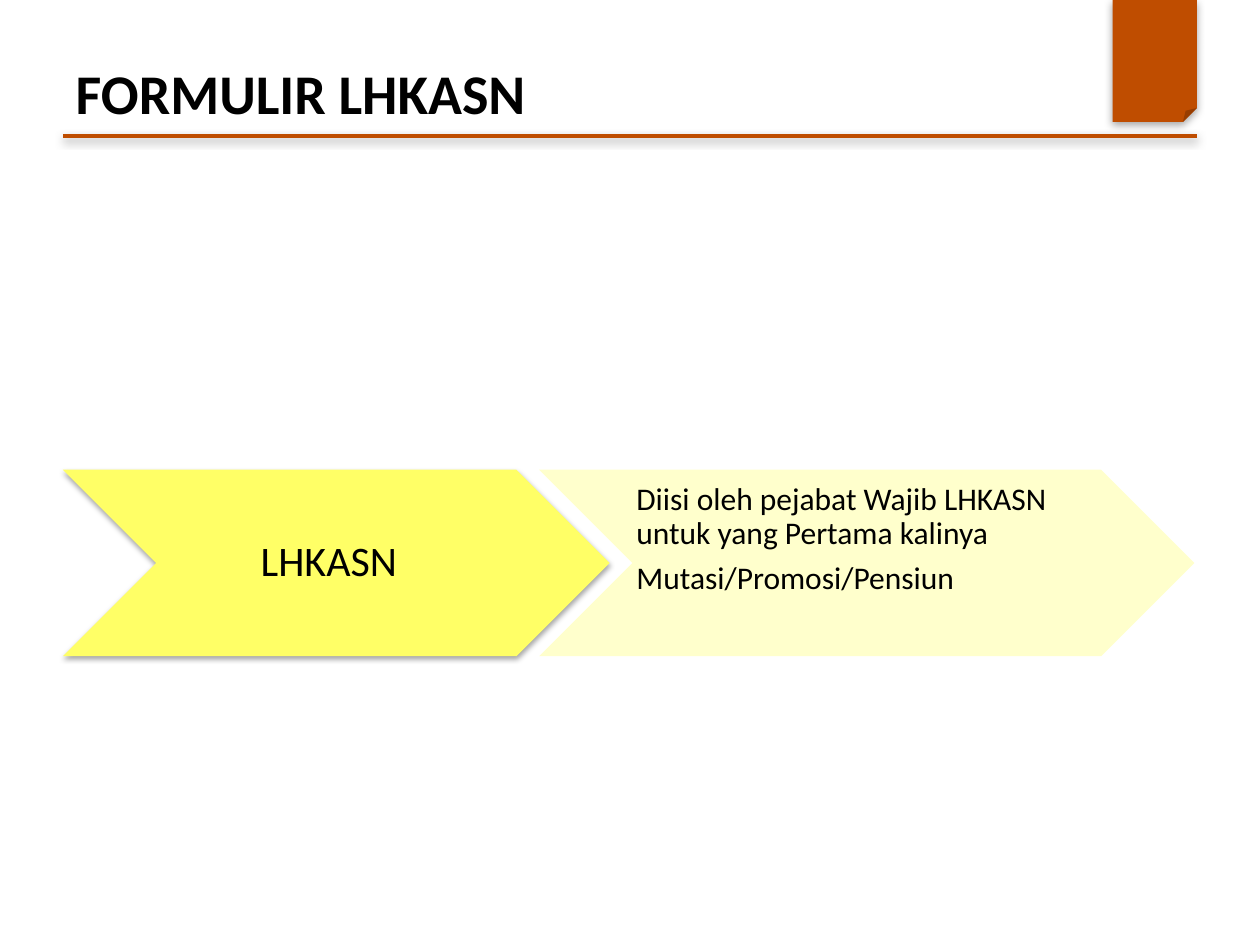
"""Build the LHKASN form slide with a title and two chevrons."""
from dataclasses import dataclass
from typing import Optional

import lxml.etree
import pptx
import pptx.dml.color
import pptx.enum.shapes
import pptx.enum.text
import pptx.oxml.ns
import pptx.util

Cm = pptx.util.Cm
Pt = pptx.util.Pt
Kind = pptx.enum.shapes.MSO_SHAPE
Anchor = pptx.enum.text.MSO_ANCHOR
Align = pptx.enum.text.PP_ALIGN

COLORS = {
    "accent": "BF4D00",
    "text": "000000",
    "form": "FFFF66",
    "detail": "FFFFCC",
}
TITLE_FORMAT = {"name": "Calibri", "size": Pt(32), "bold": True}
MARGIN = 1.27
RULE_TOP = 2.74


@dataclass
class Shadow:
    opacity: int
    blur: float
    distance: float


@dataclass
class Block:
    kind: Kind
    left: float
    top: float
    width: float
    height: float
    color: str
    shadow: Optional[Shadow] = None


@dataclass
class Caption:
    paragraphs: list[str]
    size: int
    alignment: Align
    anchor: Anchor
    insets: dict[str, float]


CHEVRON_TOP, CHEVRON_HEIGHT = 9.47, 3.76
RIBBON = Block(Kind.FOLDED_CORNER, 22.43, 0, 1.7, 2.46, "accent", Shadow(35, 5, 1.8))
CHEVRONS = [
    (
        Block(Kind.CHEVRON, MARGIN, CHEVRON_TOP, 11.02, CHEVRON_HEIGHT, "form", Shadow(35, 3.1, 1.8)),
        Caption(["LHKASN"], 24, Align.CENTER, Anchor.MIDDLE,
                {"left": 0.08, "top": 0.05, "right": 0.38, "bottom": 0.05}),
    ),
    (
        Block(Kind.CHEVRON, 10.87, CHEVRON_TOP, 13.21, CHEVRON_HEIGHT, "detail"),
        Caption(["Diisi oleh pejabat Wajib LHKASN untuk yang Pertama kalinya", "Mutasi/Promosi/Pensiun"],
                18, Align.LEFT, Anchor.TOP,
                {"left": 0.08, "top": 0.27, "right": 0, "bottom": 0.03}),
    ),
]


def rgb(name: str) -> pptx.dml.color.RGBColor:
    """Return a named colour."""
    return pptx.dml.color.RGBColor.from_string(COLORS[name])


def apply_format(target, values: dict) -> None:
    """Set each attribute of the target from the values."""
    for name, value in values.items():
        setattr(target, name, value)


def set_shadow(properties, shadow: Shadow) -> None:
    """Give shape properties a shadow that falls straight down."""
    qn = pptx.oxml.ns.qn
    for effects in properties.findall(qn("a:effectLst")):
        properties.remove(effects)
    effects = lxml.etree.SubElement(properties, qn("a:effectLst"))
    outer = lxml.etree.SubElement(
        effects, qn("a:outerShdw"), blurRad=str(Pt(shadow.blur)),
        dist=str(Pt(shadow.distance)), dir="5400000", rotWithShape="0")
    color = lxml.etree.SubElement(outer, qn("a:srgbClr"), val=COLORS["text"])
    lxml.etree.SubElement(color, qn("a:alpha"), val=str(shadow.opacity * 1000))


def draw_block(slide, block: Block):
    """Draw a filled shape without an outline."""
    shape = slide.shapes.add_shape(
        block.kind, Cm(block.left), Cm(block.top), Cm(block.width), Cm(block.height))
    shape.fill.solid()
    shape.fill.fore_color.rgb = rgb(block.color)
    shape.line.fill.background()
    shape.shadow.inherit = False
    if block.shadow:
        set_shadow(shape.element.spPr, block.shadow)
    return shape


def write_caption(shape, caption: Caption) -> None:
    """Write paragraphs inside a shape."""
    frame = shape.text_frame
    frame.text = "\n".join(caption.paragraphs)
    apply_format(frame, {"word_wrap": True, "vertical_anchor": caption.anchor})
    apply_format(frame, {f"margin_{side}": Cm(inset) for side, inset in caption.insets.items()})
    for paragraph in frame.paragraphs:
        apply_format(paragraph, {"alignment": caption.alignment, "line_spacing": 0.9})
        apply_format(paragraph.font, {"name": "Calibri", "size": Pt(caption.size)})
        paragraph.font.color.rgb = rgb("text")
    for paragraph in frame.paragraphs[:-1]:
        paragraph.space_after = Pt(0.35 * caption.size)


def draw_rule(slide) -> None:
    """Draw the line under the title."""
    rule = slide.shapes.add_connector(
        pptx.enum.shapes.MSO_CONNECTOR.STRAIGHT, Cm(MARGIN), Cm(RULE_TOP), Cm(25.4 - MARGIN), Cm(RULE_TOP))
    rule.line.color.rgb = rgb("accent")
    rule.line.width = Pt(2)
    set_shadow(rule.element.spPr, Shadow(38, 5, 1.6))


def write_title(slide) -> None:
    """Place and format the title."""
    title = slide.shapes.title
    apply_format(title, {"left": Cm(MARGIN), "top": Cm(1.07), "width": Cm(18.42), "height": Cm(1.57)})
    title.text_frame.text = "FORMULIR LHKASN"
    apply_format(title.text_frame, {"vertical_anchor": Anchor.MIDDLE, "word_wrap": True})
    paragraph = title.text_frame.paragraphs[0]
    paragraph.alignment = Align.LEFT
    apply_format(paragraph.font, TITLE_FORMAT)
    paragraph.font.color.rgb = rgb("text")


def main() -> None:
    """Build and save the presentation."""
    presentation = pptx.Presentation()
    apply_format(presentation, {"slide_width": Cm(25.4), "slide_height": Cm(19.05)})
    slide = presentation.slides.add_slide(presentation.slide_layouts[5])
    draw_block(slide, RIBBON)
    draw_rule(slide)
    write_title(slide)
    for block, caption in CHEVRONS:
        write_caption(draw_block(slide, block), caption)
    presentation.save("out.pptx")


if __name__ == "__main__":
    main()
